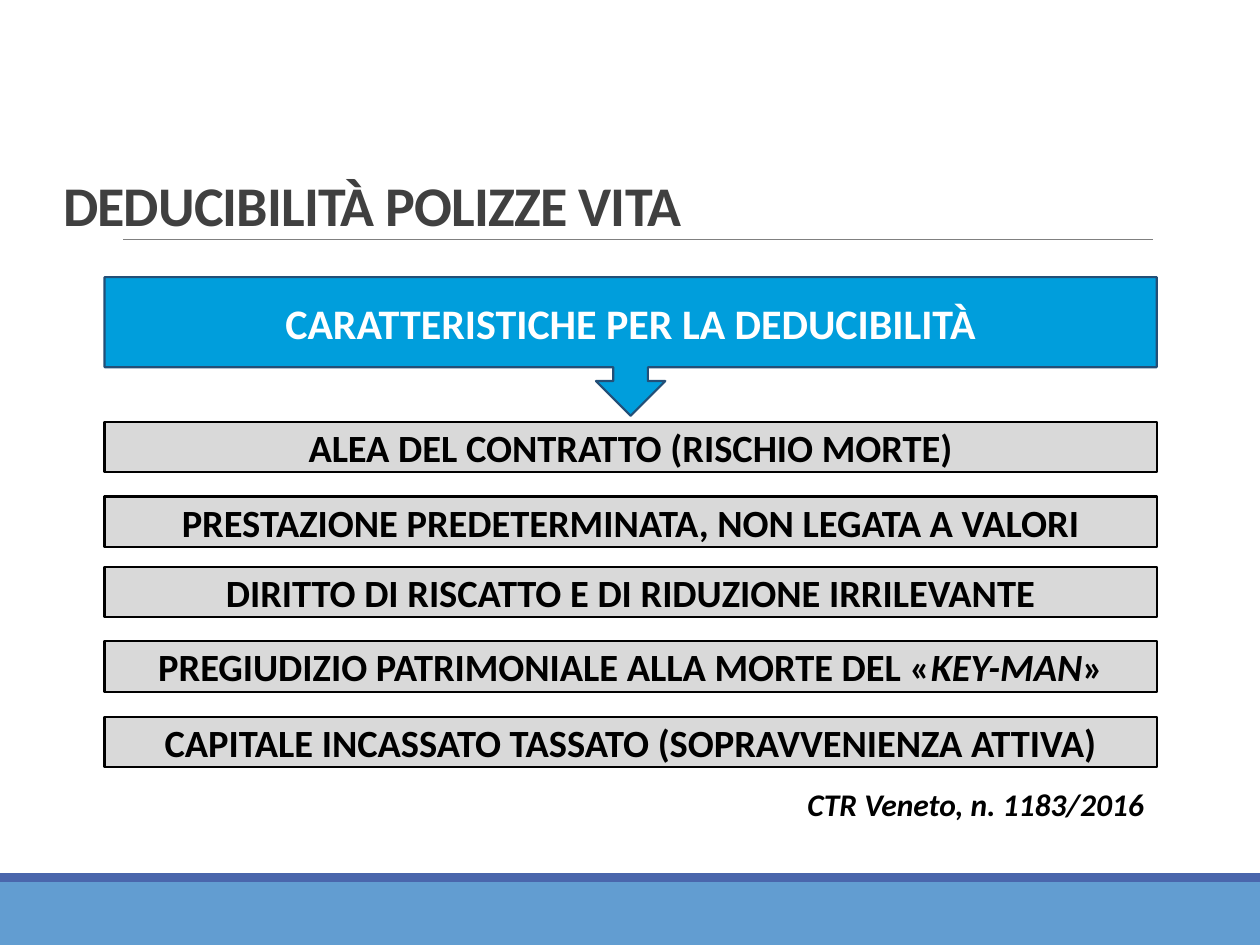
from dataclasses import dataclass

from lxml.etree import SubElement
from pptx import Presentation
from pptx.dml.color import RGBColor
from pptx.enum.shapes import MSO_CONNECTOR, MSO_SHAPE
from pptx.enum.text import MSO_ANCHOR, MSO_AUTO_SIZE, PP_ALIGN
from pptx.oxml.ns import qn
from pptx.util import Inches, Pt


@dataclass(frozen=True)
class Theme:
    """Colours, font and type sizes of the slide."""
    font: str = "Calibri"
    title: str = "404040"
    rule: str = "808080"
    band: str = "629DD1"
    band_edge: str = "4A66AC"
    callout: str = "009EDC"
    callout_line: str = "234F77"
    row: str = "D9D9D9"
    black: str = "000000"
    white: str = "FFFFFF"
    title_size: int = 32
    callout_size: int = 24
    row_size: int = 22
    source_size: int = 18
    outline: float = 1.25
    rule_width: float = 0.5


THEME = Theme()
ROWS = [
    (0, [("ALEA DEL CONTRATTO (RISCHIO MORTE)", False)]),
    (0.59, [("PRESTAZIONE PREDETERMINATA, NON LEGATA A VALORI", False)]),
    (1.15, [("DIRITTO DI RISCATTO E DI RIDUZIONE IRRILEVANTE", False)]),
    (1.74, [("PREGIUDIZIO PATRIMONIALE ALLA MORTE DEL «", False),
            ("KEY-MAN", True), ("»", False)]),
    (2.34, [("CAPITALE INCASSATO TASSATO (SOPRAVVENIENZA ATTIVA)", False)]),
]


def style_paragraph(p, size, color, align):
    """Set bold type, colour and alignment on a paragraph."""
    p.alignment = align
    p.font.name = THEME.font
    p.font.size = Pt(size)
    p.font.bold = True
    p.font.color.rgb = RGBColor.from_string(color)


def add_box(slide, kind, box, fill, line=None):
    """Add a flat filled shape, outlined if a line colour is given."""
    sp = slide.shapes.add_shape(kind, *map(Inches, box))
    sp.shadow.inherit = False
    sp.fill.solid()
    sp.fill.fore_color.rgb = RGBColor.from_string(fill)
    if line:
        sp.line.color.rgb = RGBColor.from_string(line)
        sp.line.width = Pt(THEME.outline)
    else:
        sp.line.fill.background()
    return sp


def add_footer_band(slide, box):
    """Add the bottom band with its darker top edge."""
    left, top, width, height = box
    edge = 0.07
    add_box(slide, MSO_SHAPE.RECTANGLE,
            (left, top + edge, width, height - edge), THEME.band)
    add_box(slide, MSO_SHAPE.RECTANGLE, (left, top, width, edge), THEME.band_edge)


def add_title(slide, box, text):
    """Fill the title placeholder and draw the rule below it."""
    left, top, width, height = box
    title = slide.shapes.title
    title.left, title.top, title.width, title.height = map(Inches, box)
    tf = title.text_frame
    tf.auto_size = MSO_AUTO_SIZE.NONE
    tf.vertical_anchor = MSO_ANCHOR.BOTTOM
    p = tf.paragraphs[0]
    style_paragraph(p, THEME.title_size, THEME.title, PP_ALIGN.LEFT)
    p.line_spacing = 0.85
    r = p.add_run()
    r.text = text
    r._r.get_or_add_rPr().set("spc", "-50")

    y = Inches(top + height - 0.04)
    rule = slide.shapes.add_connector(
        MSO_CONNECTOR.STRAIGHT, Inches(left + 0.58), y,
        Inches(left + width - 0.85), y)
    rule.line.color.rgb = RGBColor.from_string(THEME.rule)
    rule.line.width = Pt(THEME.rule_width)
    SubElement(rule._element.spPr, qn("a:effectLst"))


def add_callout(slide, box, text):
    """Add the heading box whose arrow points to the rows."""
    sp = add_box(slide, MSO_SHAPE.DOWN_ARROW_CALLOUT, box,
                 THEME.callout, THEME.callout_line)
    p = sp.text_frame.paragraphs[0]
    p.text = text
    style_paragraph(p, THEME.callout_size, THEME.white, PP_ALIGN.CENTER)


def add_rows(slide, box, rows):
    """Add the requirement boxes, each at its offset below the top."""
    left, top, width, height = box
    for offset, runs in rows:
        sp = add_box(slide, MSO_SHAPE.RECTANGLE,
                     (left, top + offset, width, height), THEME.row, THEME.black)
        tf = sp.text_frame
        tf.vertical_anchor = MSO_ANCHOR.MIDDLE
        p = tf.paragraphs[0]
        style_paragraph(p, THEME.row_size, THEME.black, PP_ALIGN.CENTER)
        for text, italic in runs:
            r = p.add_run()
            r.text = text
            r.font.italic = italic


def add_source(slide, box, text):
    """Add the right-aligned citation."""
    tf = slide.shapes.add_textbox(*map(Inches, box)).text_frame
    tf.word_wrap = True
    p = tf.paragraphs[0]
    p.text = text
    style_paragraph(p, THEME.source_size, THEME.black, PP_ALIGN.RIGHT)
    p.font.italic = True


def main():
    """Build and save the slide."""
    prs = Presentation()
    prs.slide_width, prs.slide_height = Inches(10), Inches(7.5)
    slide = prs.slides.add_slide(prs.slide_layouts[5])
    left, width = 0.83, 8.35
    add_footer_band(slide, (0, 6.93, 10, 0.57))
    add_title(slide, (0.4, 1.34, 9.6, 0.6), "DEDUCIBILITÀ POLIZZE VITA")
    add_callout(slide, (left, 2.2, width, 1.1), "CARATTERISTICHE PER LA DEDUCIBILITÀ")
    add_rows(slide, (left, 3.35, width, 0.4), ROWS)
    add_source(slide, (6.28, 6.18, 2.9, 0.4), "CTR Veneto, n. 1183/2016")
    prs.save("out.pptx")


if __name__ == "__main__":
    main()
